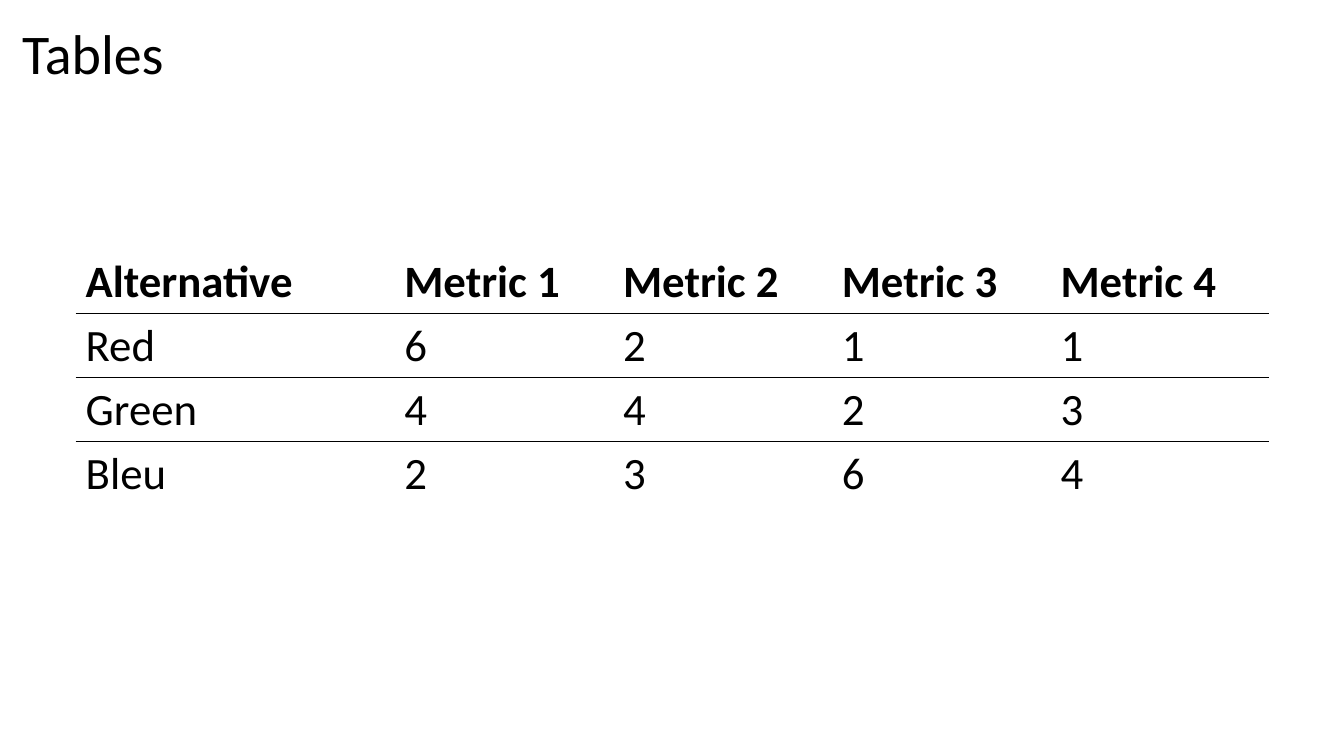
"""Build a slide with a small table comparing alternatives by metric."""
from lxml import etree
from pptx import Presentation
from pptx.dml.color import RGBColor
from pptx.enum.text import MSO_AUTO_SIZE
from pptx.oxml.ns import qn
from pptx.util import Inches, Pt

FIT_SHAPE = MSO_AUTO_SIZE.SHAPE_TO_FIT_TEXT
NO_GRID_STYLE = "{2D5ABB26-0587-4C30-8999-92F81FD0307C}"
COLORS = {"text": "000000", "rule": "000000"}
ROWS = [
    ["Alternative", "Metric 1", "Metric 2", "Metric 3", "Metric 4"],
    ["Red", "6", "2", "1", "1"],
    ["Green", "4", "4", "2", "3"],
    ["Bleu", "2", "3", "6", "4"],
]
COL_WIDTHS = [3.16] + [2.17] * 4
ROW_HEIGHT = 0.63
RULED_ROWS = (0, 1)


class SlideBuilder:
    """Hold the style and the current slide."""

    def __init__(self, slide, font="Calibri"):
        self.slide = slide
        self.font = font

    def set_text(self, tf, text, size, bold=False):
        """Put one styled paragraph into a text frame."""
        p = tf.paragraphs[0]
        p.text = text
        p.font.name = self.font
        p.font.size = Pt(size)
        p.font.bold = bold
        p.font.color.rgb = RGBColor.from_string(COLORS["text"])

    def title(self, text, left, top, width, height):
        """Add the title text box."""
        s = self.slide.shapes.add_textbox(
            Inches(left), Inches(top), Inches(width), Inches(height))
        tf = s.text_frame
        tf.word_wrap = True
        tf.auto_size = FIT_SHAPE
        self.set_text(tf, text, 40)

    def border(self, cell, side):
        """Draw a one-point rule on one side of a cell."""
        ln = etree.Element(qn(f"a:{side}"), w=str(Pt(1)))
        fill = etree.SubElement(ln, qn("a:solidFill"))
        etree.SubElement(fill, qn("a:srgbClr"), val=COLORS["rule"])
        cell._tc.get_or_add_tcPr().insert(0, ln)

    def table(self, rows, left, top):
        """Add the table with rules below the ruled rows."""
        frame = self.slide.shapes.add_table(
            len(rows), len(COL_WIDTHS), Inches(left), Inches(top),
            Inches(sum(COL_WIDTHS)), Inches(ROW_HEIGHT * len(rows)))
        table = frame.table
        table.horz_banding = False
        table._tbl.tblPr.find(qn("a:tableStyleId")).text = NO_GRID_STYLE
        for col, width in zip(table.columns, COL_WIDTHS):
            col.width = Inches(width)
        for i, values in enumerate(rows):
            table.rows[i].height = Inches(ROW_HEIGHT)
            for j, value in enumerate(values):
                cell = table.cell(i, j)
                cell.fill.background()
                self.set_text(cell.text_frame, value, 32, bold=i == 0)
                if i in RULED_ROWS:
                    self.border(cell, "lnB")
                if i - 1 in RULED_ROWS:
                    self.border(cell, "lnT")


def main():
    """Create and save the presentation."""
    prs = Presentation()
    prs.slide_width = Inches(13.33)
    prs.slide_height = Inches(7.5)
    builder = SlideBuilder(prs.slides.add_slide(prs.slide_layouts[6]))
    builder.title("Tables", 0.12, 0.13, 3.35, 0.77)
    builder.table(ROWS, 0.75, 2.48)
    prs.save("out.pptx")


if __name__ == "__main__":
    main()
